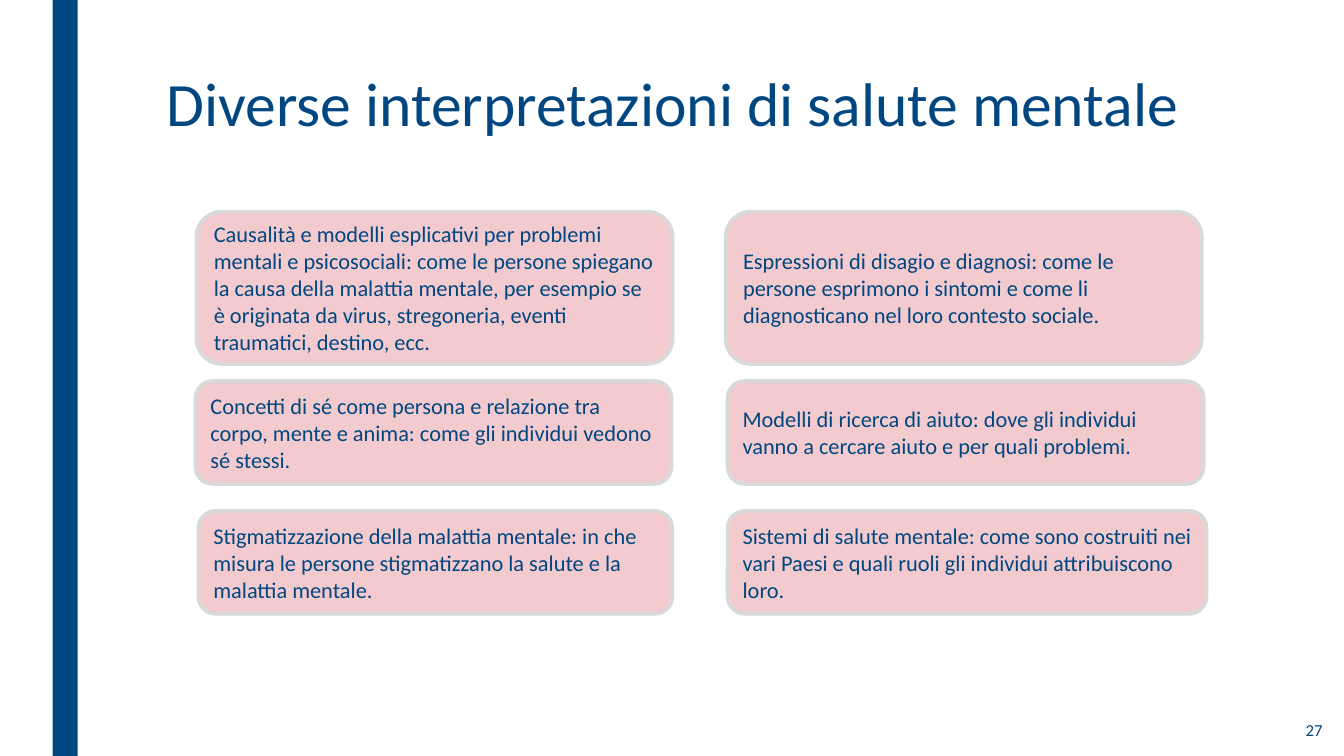
from pptx import Presentation
from pptx.dml.color import RGBColor
from pptx.enum.shapes import MSO_SHAPE
from pptx.enum.text import MSO_ANCHOR, MSO_AUTO_SIZE, PP_ALIGN
from pptx.util import Pt

NAVY, PINK, GREY = "004680", "F3CBCF", "D9D9D9"

# Each row: top, height, then (left, width, text) for both cards
CARD_ROWS = [
    (151.2, 108.7, [
        (140.4, 340, "Causalità e modelli esplicativi per problemi mentali e psicosociali: "
                     "come le persone spiegano la causa della malattia mentale, per esempio "
                     "se è originata da virus, stregoneria, eventi traumatici, destino, ecc."),
        (518.4, 340, "Espressioni di disagio e diagnosi: come le persone esprimono i sintomi "
                     "e come li diagnosticano nel loro contesto sociale."),
    ]),
    (272.2, 73.4, [
        (139.7, 340, "Concetti di sé come persona e relazione tra corpo, mente e anima: "
                     "come gli individui vedono sé stessi."),
        (519.8, 340, "Modelli di ricerca di aiuto: dove gli individui vanno a cercare aiuto "
                     "e per quali problemi."),
    ]),
    (365, 73.4, [
        (141.8, 338.4, "Stigmatizzazione della malattia mentale: in che misura le persone "
                       "stigmatizzano la salute e la malattia mentale."),
        (519.8, 342, "Sistemi di salute mentale: come sono costruiti nei vari Paesi e quali "
                     "ruoli gli individui attribuiscono loro."),
    ]),
]


def color(hex_value):
    return RGBColor.from_string(hex_value)


def set_attributes(target, values):
    for name, value in values.items():
        setattr(target, name, value)


def write_text(shape, text, size, anchor=MSO_ANCHOR.MIDDLE, align=PP_ALIGN.LEFT, spacing=1.0):
    frame = shape.text_frame
    frame.text = text
    set_attributes(frame, {"word_wrap": True, "auto_size": MSO_AUTO_SIZE.NONE,
                           "vertical_anchor": anchor})
    paragraph = frame.paragraphs[0]
    set_attributes(paragraph, {"alignment": align, "line_spacing": spacing,
                               "space_before": Pt(0)})
    set_attributes(paragraph.font, {"name": "Calibri", "size": Pt(size)})
    paragraph.font.color.rgb = color(NAVY)


def add_title(slide, text):
    title = slide.shapes.title
    set_attributes(title, {"left": Pt(111.6), "top": Pt(49), "width": Pt(782.6),
                           "height": Pt(90.7)})
    write_text(title, text, 44, anchor=MSO_ANCHOR.TOP, spacing=0.89)


def add_block(slide, kind, left, top, width, height, fill):
    block = slide.shapes.add_shape(kind, Pt(left), Pt(top), Pt(width), Pt(height))
    block.shadow.inherit = False
    block.fill.solid()
    block.fill.fore_color.rgb = color(fill)
    block.line.fill.background()
    return block


def add_card(slide, left, top, width, height, text):
    card = add_block(slide, MSO_SHAPE.ROUNDED_RECTANGLE, left, top, width, height, PINK)
    card.line.color.rgb = color(GREY)
    card.line.width = Pt(2.75)
    write_text(card, text, 16)


def add_page_number(slide, number):
    box = slide.shapes.add_textbox(Pt(825.8), Pt(505.4), Pt(126), Pt(31.7))
    write_text(box, number, 12, align=PP_ALIGN.RIGHT)


def main():
    presentation = Presentation()
    set_attributes(presentation, {"slide_width": Pt(960), "slide_height": Pt(540)})
    slide = presentation.slides.add_slide(presentation.slide_layouts.get_by_name("Title Only"))
    add_block(slide, MSO_SHAPE.RECTANGLE, 37.5, 0, 18, 540, NAVY)
    add_page_number(slide, "27")
    add_title(slide, "Diverse interpretazioni di salute mentale")
    for top, height, cards in CARD_ROWS:
        for left, width, text in cards:
            add_card(slide, left, top, width, height, text)
    presentation.save("out.pptx")


if __name__ == "__main__":
    main()
